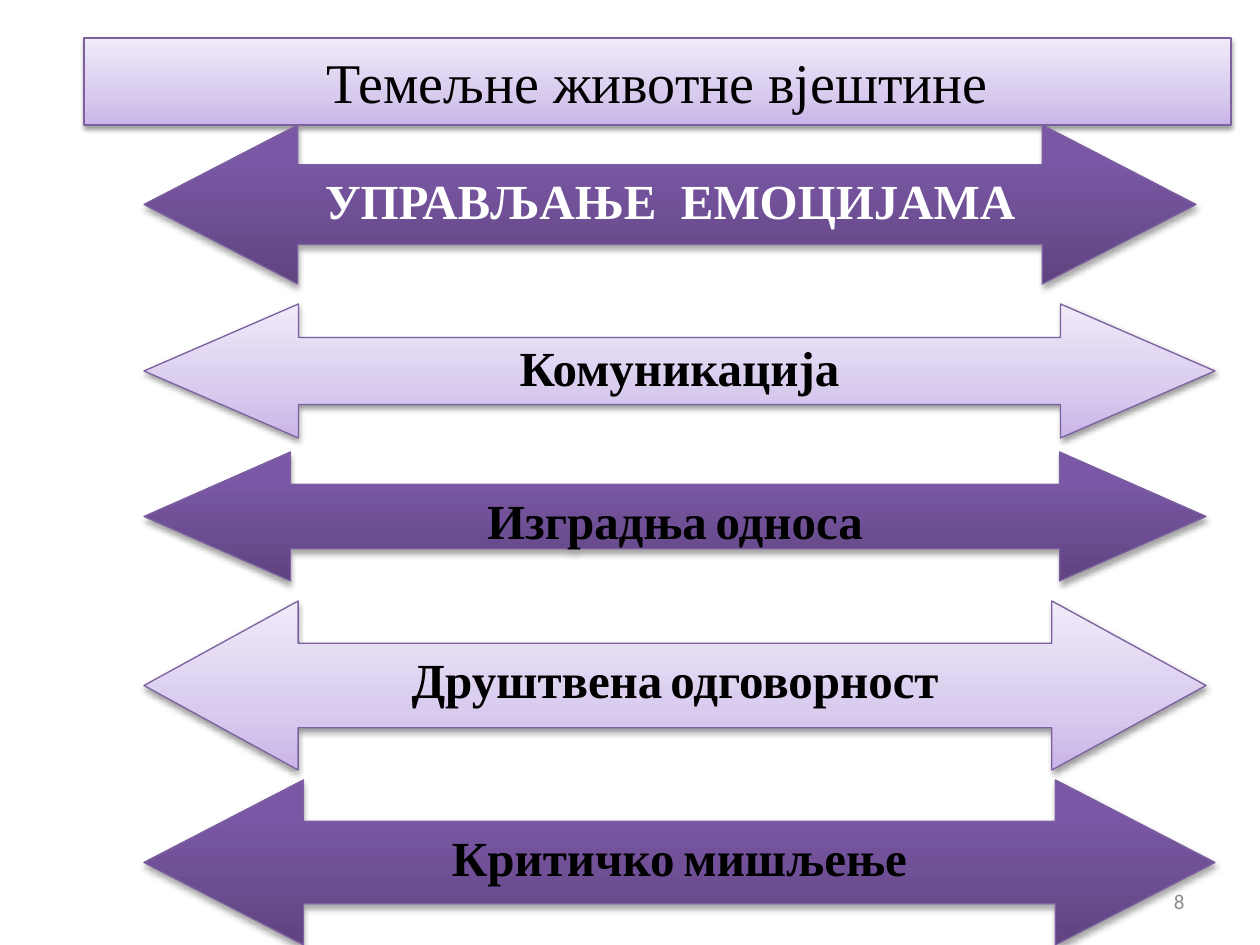
import pptx
import pptx.dml.color
import pptx.enum.shapes
import pptx.enum.text
import pptx.oxml
import pptx.oxml.ns
import pptx.util

PX = 914400 / 126
SERIF = "Times New Roman"
BLACK, WHITE, GREY, OUTLINE = "000000", "FFFFFF", "8C8C8C", "7D60A0"
LIGHT = {"stops": [(0, "C9B5E8"), (35, "D8CBEE"), (100, "F0EAF9")],
         "alpha": 38, "distance": 1.6}
DARK = {"stops": [(0, "5F4480"), (80, "7B58A6"), (100, "7C57A8")],
        "alpha": 35, "distance": 1.8}
ARROW_LEFT = 144
ALIGN = pptx.enum.text.PP_ALIGN
ANCHOR = pptx.enum.text.MSO_ANCHOR

# top, width, height, head length / height, style, text colour, gap size, words
SKILLS = [
    (304, 1071, 134, 1.153, LIGHT, BLACK, 28, ["Комуникација"]),
    (125, 1052, 159, 0.967, DARK, WHITE, 28, ["УПРАВЉАЊЕ  ЕМОЦИЈАМА"]),
    (601, 1062, 169, 0.912, LIGHT, BLACK, 18, ["Друштвена", "одговорност"]),
    (452, 1062, 129, 1.136, DARK, BLACK, 20, ["Изградња", "односа"]),
    (780, 1071, 165, 0.967, DARK, BLACK, 20, ["Критичко", "мишљење"]),
]


def px(length):
    return pptx.util.Emu(round(length * PX))


def rgb(value):
    return pptx.dml.color.RGBColor.from_string(value)


def element(xml):
    """Parse DrawingML whose root is written with the a: prefix."""
    tag, rest = xml[1:].split(" ", 1)
    return pptx.oxml.parse_xml(f"<{tag} {pptx.oxml.ns.nsdecls('a')} {rest}")


def place(shape, left, top, width, height):
    shape.left, shape.top = px(left), px(top)
    shape.width, shape.height = px(width), px(height)


def shape_as_arrow(placeholder, head):
    """Give a placeholder the double arrow outline."""
    placeholder._element.spPr.append(element(
        '<a:prstGeom prst="leftRightArrow"><a:avLst>'
        '<a:gd name="adj1" fmla="val 50000"/>'
        f'<a:gd name="adj2" fmla="val {round(head * 100000)}"/>'
        '</a:avLst></a:prstGeom>'))


def decorate(shape, style):
    """Apply the vertical gradient, the outline and the soft shadow."""
    shape.fill.gradient()
    gradient = shape._element.spPr.find(pptx.oxml.ns.qn("a:gradFill"))
    stops = "".join(
        f'<a:gs pos="{position * 1000}"><a:srgbClr val="{color}"/></a:gs>'
        for position, color in style["stops"])
    gradient.getparent().replace(gradient, element(
        f'<a:gradFill rotWithShape="1"><a:gsLst>{stops}</a:gsLst>'
        '<a:lin ang="16200000" scaled="0"/></a:gradFill>'))
    shape.line.color.rgb = rgb(OUTLINE)
    shape.line.width = pptx.util.Pt(0.75)
    shape.shadow.inherit = False
    effects = shape._element.spPr.find(pptx.oxml.ns.qn("a:effectLst"))
    effects.append(element(
        f'<a:outerShdw blurRad="{pptx.util.Pt(3.1)}" '
        f'dist="{pptx.util.Pt(style["distance"])}" dir="5400000" '
        f'rotWithShape="0"><a:srgbClr val="{BLACK}">'
        f'<a:alpha val="{style["alpha"] * 1000}"/></a:srgbClr></a:outerShdw>'))


def format_span(span, size, color, name=SERIF, bold=False):
    span.font.size = pptx.util.Pt(size)
    span.font.name = name
    span.font.bold = bold
    span.font.color.rgb = rgb(color)


def write(shape, words, size, color, gap_size=None, name=SERIF, bold=False,
          align=ALIGN.CENTER, anchor=ANCHOR.MIDDLE):
    """Write words in one paragraph, with spaces of their own size between."""
    frame = shape.text_frame
    frame.word_wrap = True
    frame.auto_size = pptx.enum.text.MSO_AUTO_SIZE.NONE
    frame.vertical_anchor = anchor
    para = frame.paragraphs[0]
    para.alignment = align
    para.space_before = pptx.util.Pt(0)
    for index, word in enumerate(words):
        if index:
            gap = para.add_run()
            gap.text = " "
            format_span(gap, gap_size, color, name, bold)
        span = para.add_run()
        span.text = word
        format_span(span, size, color, name, bold)
    return para


def add_skill(page, skill, placeholder=None):
    top, width, height, head, style, color, gap_size, words = skill
    if placeholder is None:
        arrow = page.shapes.add_shape(
            pptx.enum.shapes.MSO_SHAPE.LEFT_RIGHT_ARROW,
            px(ARROW_LEFT), px(top), px(width), px(height))
        arrow.adjustments[1] = head
    else:
        arrow = placeholder
        place(arrow, ARROW_LEFT, top, width, height)
        shape_as_arrow(arrow, head)
    decorate(arrow, style)
    para = write(arrow, words, 28, color, gap_size, bold=True,
                 anchor=ANCHOR.TOP)
    para.space_after = pptx.util.Pt(10)
    if placeholder is not None:
        para.line_spacing = 0.9
        properties = para._p.get_or_add_pPr()
        properties.set("marL", "0")
        properties.set("indent", "0")
        properties.append(element("<a:buNone />"))


def add_page_number(page, number):
    box = page.shapes.add_textbox(px(903), px(876), px(294), px(50))
    write(box, [number], 12, GREY, name="Calibri", align=ALIGN.RIGHT)


def main():
    deck = pptx.Presentation()
    deck.slide_width, deck.slide_height = px(1260), px(945)
    page = deck.slides.add_slide(deck.slide_layouts[1])
    title, body = page.placeholders
    place(title, 84, 38, 1147, 87)
    decorate(title, LIGHT)
    write(title, ["Темељне животне вјештине"], 32, BLACK)
    add_skill(page, SKILLS[0], body)
    for skill in SKILLS[1:]:
        add_skill(page, skill)
    add_page_number(page, "8")
    deck.save("out.pptx")


if __name__ == "__main__":
    main()
